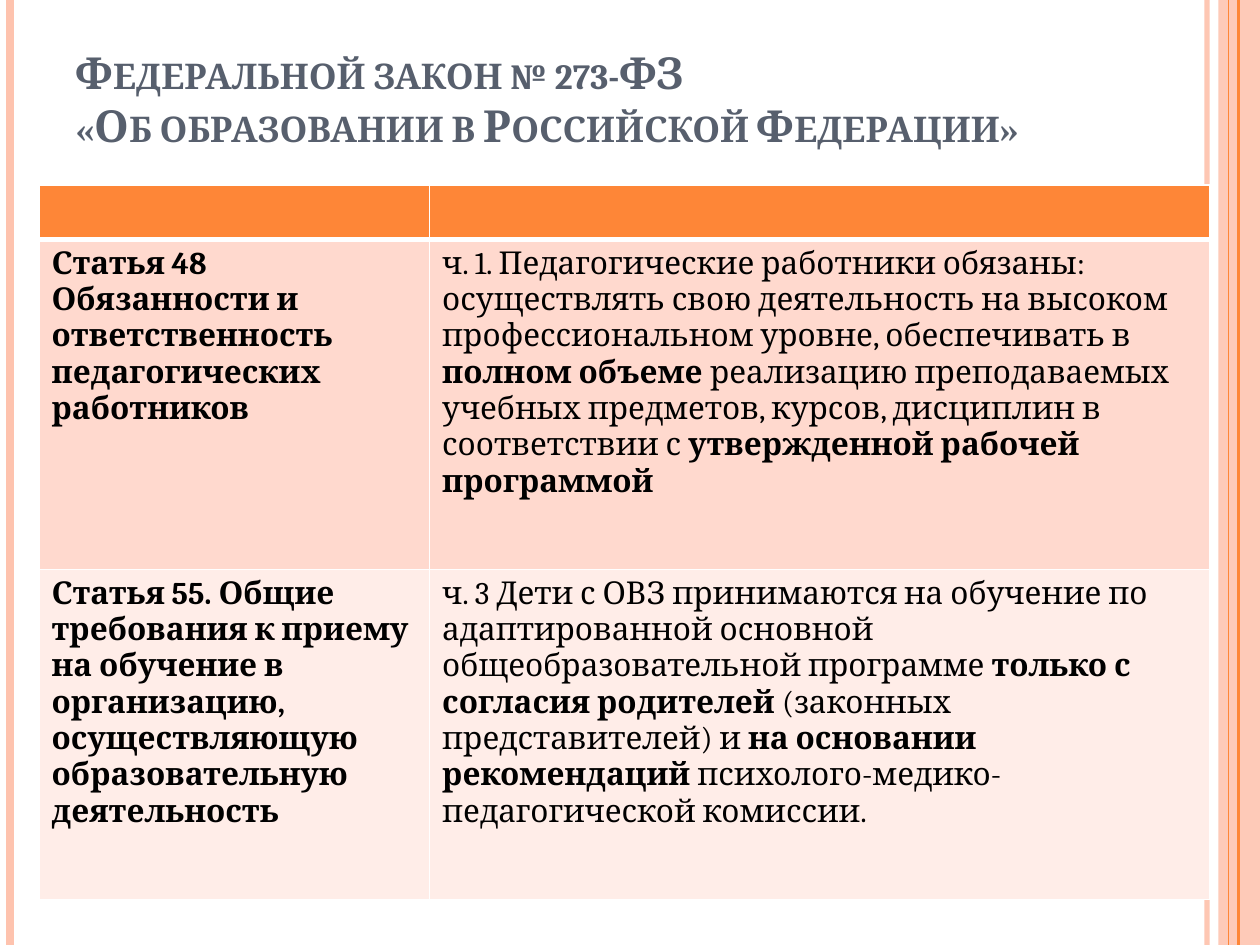
"""Build a slide with a table on two articles of the federal education law."""
from lxml import etree
from pptx import Presentation
from pptx.dml.color import RGBColor
from pptx.enum.shapes import MSO_CONNECTOR, MSO_SHAPE
from pptx.enum.text import MSO_ANCHOR, MSO_AUTO_SIZE, PP_ALIGN
from pptx.oxml import parse_xml
from pptx.oxml.ns import nsdecls, qn
from pptx.util import Inches, Pt

STRAIGHT, RECTANGLE = MSO_CONNECTOR.STRAIGHT, MSO_SHAPE.RECTANGLE
LEFT, BOTTOM, NO_FIT = PP_ALIGN.LEFT, MSO_ANCHOR.BOTTOM, MSO_AUTO_SIZE.NONE

THEME = {
    "font": "Cambria", "title_size": 25.2, "body_size": 18,
    "title": "575F6D", "text": "000000", "border": "FFFFFF",
    "accent": "FE8637", "pale": "FEC3AE",
    "rows": ["FE8637", "FFD9CE", "FFEDE8"],
}


def add_span(para, text, *, size, color, bold=False, small_caps=False):
    """Append formatted text to a paragraph."""
    span = para.add_run()
    span.text = text
    span.font.name = THEME["font"]
    span.font.size = Pt(size)
    span.font.bold = bold
    span.font.color.rgb = RGBColor.from_string(color)
    if small_caps:
        span.font._element.set("cap", "small")


def set_opacity(fill_parent, percent):
    """Set the opacity of the solid colour inside an element."""
    color = fill_parent.find(".//" + qn("a:srgbClr"))
    etree.SubElement(color, qn("a:alpha")).set("val", str(percent * 1000))


deck = Presentation()
deck.slide_width, deck.slide_height = Inches(10), Inches(7.5)
page = deck.slides.add_slide(deck.slide_layouts[5])

band = page.shapes.add_shape(RECTANGLE, Inches(9.67), 0, Inches(0.33), Inches(7.5))
band.shadow.inherit = False
band.fill.solid()
band.fill.fore_color.rgb = RGBColor.from_string(THEME["pale"])
band.line.fill.background()
set_opacity(band._element.spPr, 87)

for left, color, width, opacity in [
    (0.08, "pale", 4.5, 100), (9.58, "pale", 3, 93),
    (9.75, "accent", 0.75, 100), (9.83, "accent", 1.5, 100),
]:
    stripe = page.shapes.add_connector(
        STRAIGHT, Inches(left), 0, Inches(left), Inches(7.5))
    stripe.line.color.rgb = RGBColor.from_string(THEME[color])
    stripe.line.width = Pt(width)
    if opacity < 100:
        set_opacity(stripe._element.spPr, opacity)
    etree.SubElement(stripe._element.spPr, qn("a:effectLst"))

title = page.shapes.title
title.left, title.top = Inches(0.5), Inches(0.3)
title.width, title.height = Inches(9.03), Inches(0.95)
frame = title.text_frame
frame.word_wrap = True
frame.auto_size = NO_FIT
frame.vertical_anchor = BOTTOM
heading = frame.paragraphs[0]
heading.alignment = LEFT
title_format = {"size": THEME["title_size"], "color": THEME["title"],
                "bold": True, "small_caps": True}
add_span(heading, "Федеральной закон № 273-ФЗ", **title_format)
heading.add_line_break()
add_span(heading, "«Об образовании в Российской Федерации»", **title_format)

ROWS = [
    [[], []],
    [
        [[("Статья 48 Обязанности и ответственность педагогических работников", True)]],
        [
            [("ч. 1. Педагогические работники обязаны:", False)],
            [("осуществлять свою деятельность на высоком профессиональном уровне, "
              "обеспечивать в ", False),
             ("полном объеме ", True),
             ("реализацию преподаваемых учебных предметов, курсов, дисциплин "
              "в соответствии с ", False),
             ("утвержденной рабочей программой", True)],
        ],
    ],
    [
        [[("Статья 55. Общие требования к приему на обучение в организацию, "
           "осуществляющую образовательную деятельность", True)]],
        [
            [("ч. 3 Дети с ОВЗ принимаются на обучение по адаптированной основной "
              "общеобразовательной программе ", False),
             ("только с согласия родителей ", True),
             ("(законных представителей) и ", False),
             ("на основании рекомендаций", True),
             (" психолого-медико-педагогической комиссии.", False)],
        ],
    ],
]

table = page.shapes.add_table(
    3, 2, Inches(0.31), Inches(1.47), Inches(9.29), Inches(5.67)).table
for column, width in zip(table.columns, [3.1, 6.19]):
    column.width = Inches(width)
for row, height in zip(table.rows, [0.43, 2.62, 2.62]):
    row.height = Inches(height)

for row_index, row in enumerate(ROWS):
    for column_index, paragraphs in enumerate(row):
        cell = table.cell(row_index, column_index)
        cell.fill.solid()
        cell.fill.fore_color.rgb = RGBColor.from_string(THEME["rows"][row_index])
        properties = cell._tc.get_or_add_tcPr()
        for position, side in enumerate("LRTB"):
            heavy = (row_index, side) in [(0, "B"), (1, "T")]
            properties.insert(position, parse_xml(
                f'<a:ln{side} {nsdecls("a")} w="{Pt(3 if heavy else 1)}"><a:solidFill>'
                f'<a:srgbClr val="{THEME["border"]}"/></a:solidFill></a:ln{side}>'))
        for index, spans in enumerate(paragraphs):
            frame = cell.text_frame
            para = frame.add_paragraph() if index else frame.paragraphs[0]
            for text, bold in spans:
                add_span(para, text, size=THEME["body_size"],
                         color=THEME["text"], bold=bold)

deck.save("out.pptx")
